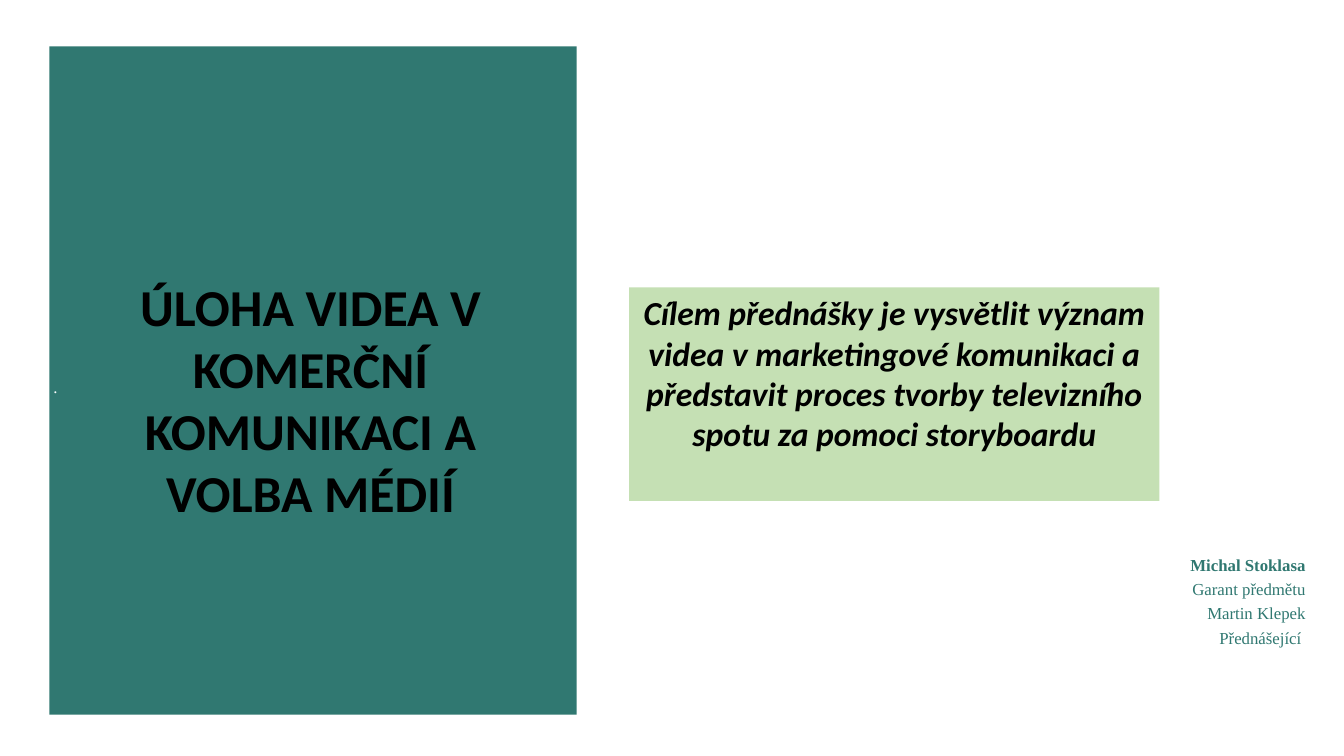
from pptx import Presentation
from pptx.dml.color import RGBColor
from pptx.enum.shapes import MSO_SHAPE
from pptx.enum.text import MSO_ANCHOR, MSO_AUTO_SIZE, PP_ALIGN
from pptx.util import Inches, Pt

TEAL = RGBColor(0x30, 0x78, 0x71)
LIGHT_GREEN = RGBColor(0xC5, 0xE0, 0xB4)
BLACK = RGBColor(0, 0, 0)
WHITE = RGBColor(0xFF, 0xFF, 0xFF)
SANS, SERIF = "Calibri", "Times New Roman"
RECT = MSO_SHAPE.RECTANGLE
TOP, BOTTOM = MSO_ANCHOR.TOP, MSO_ANCHOR.BOTTOM
NO_FIT = MSO_AUTO_SIZE.NONE
LEFT, CENTER, RIGHT = PP_ALIGN.LEFT, PP_ALIGN.CENTER, PP_ALIGN.RIGHT


def write(p, text, font=SANS, size=12, color=BLACK, bold=False, italic=False,
          align=LEFT, before=0):
    p.alignment = align
    p.space_before = Pt(before)
    r = p.add_run()
    r.text = text
    r.font.name, r.font.size = font, Pt(size)
    r.font.bold, r.font.italic = bold, italic
    r.font.color.rgb = color


class SlideBuilder:
    def __init__(self, prs):
        self.slide = prs.slides.add_slide(prs.slide_layouts[5])

    def frame(self, sp, insets=(0.1, 0.05), anchor=TOP):
        tf = sp.text_frame
        tf.auto_size = NO_FIT
        tf.word_wrap = True
        tf.vertical_anchor = anchor
        tf.margin_left = tf.margin_right = Inches(insets[0])
        tf.margin_top = tf.margin_bottom = Inches(insets[1])
        return tf

    def title(self, text, x, y, w, h, **fmt):
        sp = self.slide.shapes.title
        sp.left, sp.top, sp.width, sp.height = map(Inches, (x, y, w, h))
        write(self.frame(sp, anchor=BOTTOM).paragraphs[0], text, **fmt)
        # Bring the title in front of the panel
        self.slide.shapes._spTree.append(sp._element)

    def panel(self, x, y, w, h, color):
        sp = self.slide.shapes.add_shape(RECT, *map(Inches, (x, y, w, h)))
        sp.shadow.inherit = False
        sp.fill.solid()
        sp.fill.fore_color.rgb = color
        sp.line.fill.background()
        return self.frame(sp)

    def text_box(self, x, y, w, h, insets):
        sp = self.slide.shapes.add_textbox(*map(Inches, (x, y, w, h)))
        return self.frame(sp, insets)


def main():
    prs = Presentation()
    prs.slide_width, prs.slide_height = Inches(13.33), Inches(7.5)
    s = SlideBuilder(prs)

    # Title panel
    s.panel(0.49, 0.46, 5.23, 6.63, TEAL)
    s.title("ÚLOHA VIDEA V KOMERČNÍ KOMUNIKACI A VOLBA MÉDIÍ",
            0.73, 0.79, 4.7, 4.45, size=37, bold=True, align=CENTER)
    tf = s.text_box(0.43, 3.26, 5.29, 3.15, insets=(0.1, 0.48))
    write(tf.paragraphs[0], ".", font=SERIF, color=WHITE)

    # Lecture goal
    tf = s.panel(6.24, 2.85, 5.26, 2.12, LIGHT_GREEN)
    write(tf.paragraphs[0],
          "Cílem přednášky je vysvětlit význam videa v marketingové komunikaci "
          "a představit proces tvorby televizního spotu za pomoci storyboardu",
          size=24, bold=True, italic=True, align=CENTER)

    # Lecturers
    tf = s.text_box(10.14, 5.43, 2.94, 1.68, insets=(0.13, 0.07))
    lecturers = ["Michal Stoklasa", "Garant předmětu", "Martin Klepek",
                 "Přednášející "]
    for i, line in enumerate(lecturers):
        p = tf.add_paragraph() if i else tf.paragraphs[0]
        write(p, line, font=SERIF, color=TEAL, bold=i == 0, align=RIGHT,
              before=3 if i else 0)

    prs.save("out.pptx")


if __name__ == "__main__":
    main()
